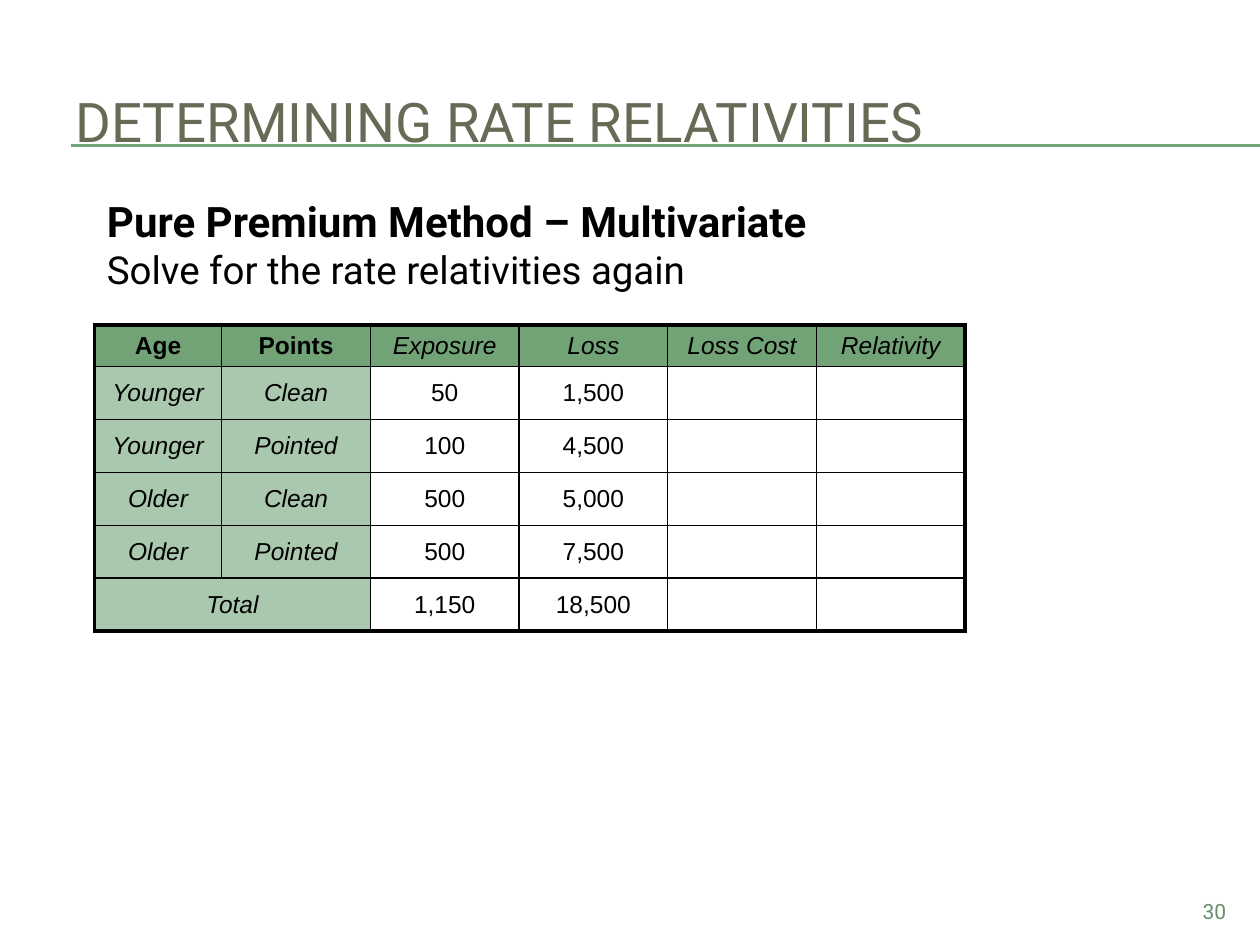
from lxml.etree import SubElement
from pptx import Presentation
from pptx.dml.color import RGBColor
from pptx.enum.shapes import MSO_CONNECTOR
from pptx.enum.text import MSO_ANCHOR, PP_ALIGN
from pptx.oxml.ns import qn
from pptx.util import Inches, Pt

COLORS = {
    "title": "676A55",
    "text": "000000",
    "rule": "72A376",
    "header": "72A376",
    "label": "AAC8AD",
    "number": "659068",
}
ROWS = [
    ["Age", "Points", "Exposure", "Loss", "Loss Cost", "Relativity"],
    ["Younger", "Clean", "50", "1,500", "", ""],
    ["Younger", "Pointed", "100", "4,500", "", ""],
    ["Older", "Clean", "500", "5,000", "", ""],
    ["Older", "Pointed", "500", "7,500", "", ""],
    ["Total", "", "1,150", "18,500", "", ""],
]
COLUMN_WIDTHS = [1.01] + [1.18] * 5
ROW_HEIGHTS = [0.33] + [0.42] * 5
LABEL_COLUMNS = 2
INNER_BORDER, OUTER_BORDER = 1, 2.25


def rgb(name):
    return RGBColor.from_string(COLORS[name])


def format_runs(paragraph, size, color, font="Roboto", bold=False, italic=False):
    for run in paragraph.runs:
        run.font.name = font
        run.font.size = Pt(size)
        run.font.bold = bold
        run.font.italic = italic
        run.font.color.rgb = rgb(color)


def add_rule(slide, y):
    rule = slide.shapes.add_connector(
        MSO_CONNECTOR.STRAIGHT, Inches(0.56), Inches(y), Inches(10), Inches(y))
    rule.line.color.rgb = rgb("rule")
    rule.line.width = Pt(0.75)
    SubElement(rule._element.spPr, qn("a:effectLst"))


def set_title(slide, wording):
    title = slide.shapes.title
    title.left, title.top = Inches(0.5), Inches(0.5)
    title.width, title.height = Inches(9.5), Inches(0.92)
    title.text_frame.text = wording
    title.text_frame.vertical_anchor = MSO_ANCHOR.MIDDLE
    heading = title.text_frame.paragraphs[0]
    heading.alignment = PP_ALIGN.LEFT
    format_runs(heading, 31.2, "title")


def add_text(slide, left, top, width, height, wording):
    box = slide.shapes.add_textbox(
        Inches(left), Inches(top), Inches(width), Inches(height))
    box.text_frame.word_wrap = True
    box.text_frame.text = wording
    return box.text_frame.paragraphs


def set_borders(cell, row, column):
    outer_edges = {
        "a:lnL": column == 0,
        "a:lnR": column == len(COLUMN_WIDTHS) - 1,
        "a:lnT": row == 0,
        "a:lnB": row == len(ROWS) - 1,
    }
    properties = cell._tc.get_or_add_tcPr()
    for edge, is_outer in outer_edges.items():
        width = Pt(OUTER_BORDER if is_outer else INNER_BORDER)
        border = SubElement(properties, qn(edge), w=str(width))
        fill = SubElement(border, qn("a:solidFill"))
        SubElement(fill, qn("a:srgbClr"), val=COLORS["text"])


def fill_cell(cell, row, column):
    if row > 0 and column >= LABEL_COLUMNS:
        cell.fill.background()
        return
    cell.fill.solid()
    cell.fill.fore_color.rgb = rgb("header" if row == 0 else "label")


def add_rate_table(slide):
    table = slide.shapes.add_table(
        len(ROWS), len(COLUMN_WIDTHS), Inches(0.75), Inches(2.58),
        Inches(sum(COLUMN_WIDTHS)), Inches(sum(ROW_HEIGHTS))).table
    for column, width in zip(table.columns, COLUMN_WIDTHS):
        column.width = Inches(width)
    for row, height in zip(table.rows, ROW_HEIGHTS):
        row.height = Inches(height)
    for r, values in enumerate(ROWS):
        for c, value in enumerate(values):
            cell = table.cell(r, c)
            set_borders(cell, r, c)
            fill_cell(cell, r, c)
            cell.vertical_anchor = MSO_ANCHOR.MIDDLE
            cell.text_frame.text = value
            entry = cell.text_frame.paragraphs[0]
            entry.alignment = PP_ALIGN.CENTER
            is_key = r == 0 and c < LABEL_COLUMNS
            is_label = r == 0 or c < LABEL_COLUMNS
            format_runs(entry, 14, "text", "Arial", is_key, is_label and not is_key)
    last = len(ROWS) - 1
    table.cell(last, 0).merge(table.cell(last, LABEL_COLUMNS - 1))


def main():
    presentation = Presentation()
    presentation.slide_width, presentation.slide_height = Inches(10), Inches(7.5)
    slide = presentation.slides.add_slide(presentation.slide_layouts[5])
    for y in (1.15, 1.16):
        add_rule(slide, y)
    add_rate_table(slide)
    set_title(slide, "DETERMINING RATE RELATIVITIES")
    method, task = add_text(
        slide, 0.75, 1.5, 7.42, 0.88,
        "Pure Premium Method – Multivariate\nSolve for the rate relativities again")
    format_runs(method, 24, "text", bold=True)
    format_runs(task, 22, "text")
    page_number = add_text(slide, 9, 7.08, 0.83, 0.27, "30")[0]
    page_number.alignment = PP_ALIGN.RIGHT
    format_runs(page_number, 12, "number")
    presentation.save("out.pptx")


if __name__ == "__main__":
    main()
